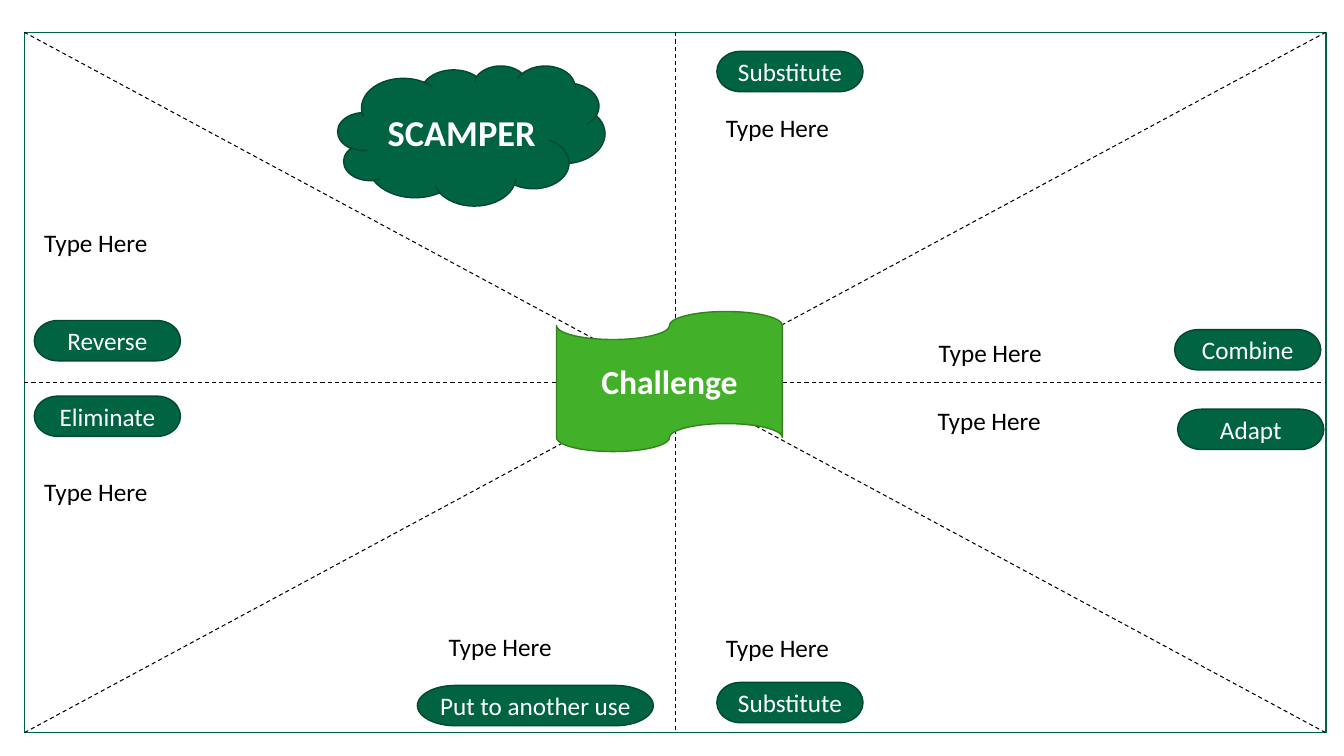
from pptx import Presentation
from pptx.dml.color import RGBColor
from pptx.enum.dml import MSO_LINE
from pptx.enum.shapes import MSO_CONNECTOR, MSO_SHAPE
from pptx.enum.text import MSO_ANCHOR, MSO_AUTO_SIZE, PP_ALIGN
from pptx.oxml.ns import qn
from pptx.util import Inches, Pt
from lxml.etree import SubElement

# Content: text and position in inches
FRAME = (0.24, 0.32, 12.91, 6.95)
TAG_W, TAG_H = 1.45, 0.4
TAGS = [  # text, left, top, width
    ("Substitute", 7.11, 0.51, TAG_W),
    ("Reverse", 0.34, 3.18, TAG_W),
    ("Eliminate", 0.34, 3.93, TAG_W),
    ("Put to another use", 4.14, 6.8, 2.34),
    ("Adapt", 11.68, 4.06, TAG_W),
    ("Combine", 11.65, 3.27, TAG_W),
    ("Substitute", 7.11, 6.77, TAG_W),
]
PROMPT = "Type Here"
PROMPT_SIZE = (2.09, 0.4)
PROMPTS = [(7.1, 1.07), (4.35, 6.21), (7.1, 6.22), (9.2, 3.97),
           (9.21, 3.3), (0.34, 4.68), (0.34, 2.21)]

# Formats
GREEN, DARK_GREEN = "006341", "004930"
LIME, DARK_LIME = "43B02A", "32821F"
BLACK, WHITE = "000000", "FFFFFF"
TAG_FONT = {"size": Pt(18), "bold": False}
CHALLENGE_FONT = {"size": Pt(24), "bold": True}
TITLE_FONT = {"size": Pt(26), "bold": True}


def color(value):
    return RGBColor.from_string(value)


def write(sp, text, font, text_color):
    p = sp.text_frame.paragraphs[0]
    r = p.add_run()
    r.text = text
    for name, value in {"name": "Calibri", **font}.items():
        setattr(r.font, name, value)
    r.font.color.rgb = color(text_color)
    return p


def add_shape(kind, box, fill, line):
    sp = s.shapes.add_shape(kind, *map(Inches, box))
    sp.shadow.inherit = False
    if fill:
        sp.fill.solid()
        sp.fill.fore_color.rgb = color(fill)
    else:
        sp.fill.background()
    sp.line.color.rgb = color(line)
    sp.line.width = Pt(1)
    return sp


def add_label(kind, box, text, font, fill, line):
    sp = add_shape(kind, box, fill, line)
    tf = sp.text_frame
    tf.margin_left = tf.margin_right = 0
    tf.vertical_anchor = MSO_ANCHOR.MIDDLE
    write(sp, text, font, WHITE).alignment = PP_ALIGN.CENTER


def add_divider(x1, y1, x2, y2):
    line = s.shapes.add_connector(MSO_CONNECTOR.STRAIGHT,
                                  *map(Inches, (x1, y1, x2, y2)))
    line.line.color.rgb = color(BLACK)
    line.line.width = Pt(0.75)
    line.line.dash_style = MSO_LINE.DASH
    SubElement(line._element.spPr, qn("a:effectLst"))
    return line


prs = Presentation()
prs.slide_width, prs.slide_height = Inches(13.33), Inches(7.5)
s = prs.slides.add_slide(prs.slide_layouts[6])

# Frame with its diagonals and middle lines
frame = add_shape(MSO_SHAPE.RECTANGLE, FRAME, None, GREEN)
left, top, width, height = FRAME
right, bottom = left + width, top + height
mid_x, mid_y = left + width / 2, top + height / 2
add_divider(left, top, right, bottom)
add_divider(right, top, left, bottom)
for ends, start, end in [((mid_x, top, mid_x, bottom), 0, 2),
                         ((left, mid_y, right, mid_y), 1, 3)]:
    divider = add_divider(*ends)
    divider.begin_connect(frame, start)
    divider.end_connect(frame, end)

# Challenge, tags and title
add_label(MSO_SHAPE.FLOWCHART_PUNCHED_TAPE, (5.52, 3.09, 2.24, 1.39),
          "Challenge", CHALLENGE_FONT, LIME, DARK_LIME)
for text, x, y, w in TAGS:
    add_label(MSO_SHAPE.FLOWCHART_TERMINATOR, (x, y, w, TAG_H),
              text, TAG_FONT, GREEN, DARK_GREEN)
add_label(MSO_SHAPE.CLOUD, (3.35, 0.65, 2.65, 1.39),
          "SCAMPER", TITLE_FONT, GREEN, DARK_GREEN)

# Prompts
for position in PROMPTS:
    tb = s.shapes.add_textbox(*map(Inches, position + PROMPT_SIZE))
    tb.text_frame.word_wrap = True
    tb.text_frame.auto_size = MSO_AUTO_SIZE.SHAPE_TO_FIT_TEXT
    write(tb, PROMPT, TAG_FONT, BLACK)

prs.save("out.pptx")
